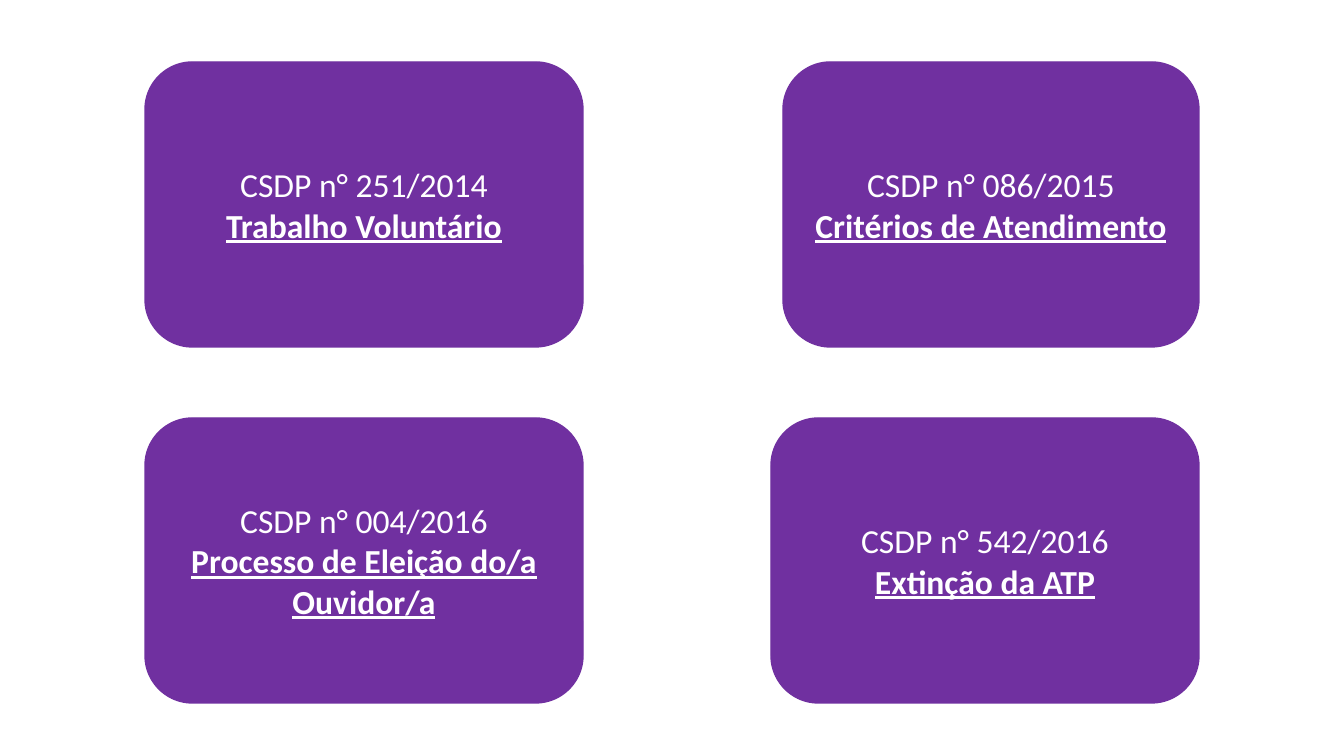
from pptx import Presentation
from pptx import util as u
from pptx.dml.color import RGBColor
from pptx.enum import shapes, text

RESOLUTIONS = [
    [("CSDP n° 251/2014", "Trabalho Voluntário", 438),
     ("CSDP n° 086/2015", "Critérios de Atendimento", 416)],
    [("CSDP n° 004/2016", "Processo de Eleição do/a Ouvidor/a", 438),
     ("CSDP n° 542/2016", "Extinção da ATP", 428)],
]

PURPLE = RGBColor(0x70, 0x30, 0xA0)
WHITE = RGBColor(0xFF, 0xFF, 0xFF)

SLIDE_WIDTH, SLIDE_HEIGHT = 1344, 756
LEFT_EDGE, RIGHT_EDGE = 145, 1199
FIRST_TOP, ROW_STEP, CARD_HEIGHT = 62, 356, 285


def px(length):
    return u.Emu(round(length * 914400 / 100.8))


def add_card(slide, left, top, width, number, subject):
    card = slide.shapes.add_shape(
        shapes.MSO_SHAPE.ROUNDED_RECTANGLE,
        px(left), px(top), px(width), px(CARD_HEIGHT))
    card.shadow.inherit = False
    card.fill.solid()
    card.fill.fore_color.rgb = PURPLE
    card.line.color.rgb = PURPLE
    card.line.width = u.Pt(1)

    frame = card.text_frame
    frame.word_wrap = True
    frame.vertical_anchor = text.MSO_ANCHOR.MIDDLE
    frame.text = f"{number}\n{subject}"
    for paragraph in frame.paragraphs:
        paragraph.alignment = text.PP_ALIGN.CENTER
        font = paragraph.runs[0].font
        font.name = "Calibri"
        font.size = u.Pt(24)
        font.color.rgb = WHITE
    font.bold = True
    font.underline = True


def main():
    deck = Presentation()
    deck.slide_width, deck.slide_height = px(SLIDE_WIDTH), px(SLIDE_HEIGHT)
    slide = deck.slides.add_slide(deck.slide_layouts.get_by_name("Blank"))
    for row, resolutions in enumerate(RESOLUTIONS):
        top = FIRST_TOP + row * ROW_STEP
        for column, (number, subject, width) in enumerate(resolutions):
            left = RIGHT_EDGE - width if column else LEFT_EDGE
            add_card(slide, left, top, width, number, subject)
    deck.save("out.pptx")


if __name__ == "__main__":
    main()
